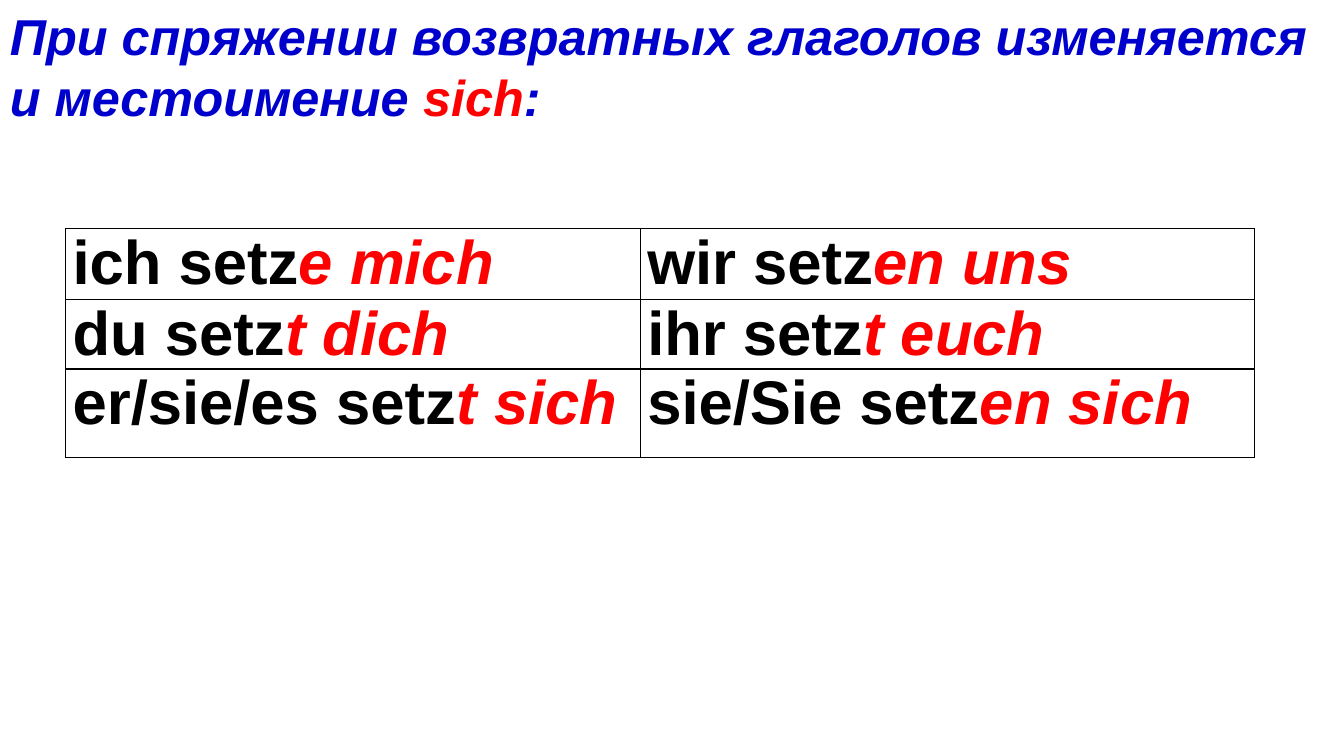
from dataclasses import dataclass

from lxml import etree
from pptx import Presentation
from pptx.dml.color import RGBColor
from pptx.enum.text import MSO_ANCHOR, PP_ALIGN
from pptx.oxml.ns import qn
from pptx.util import Pt

MIDDLE = MSO_ANCHOR.MIDDLE
TOP = MSO_ANCHOR.TOP
LEFT = PP_ALIGN.LEFT
JUSTIFY = PP_ALIGN.JUSTIFY
EMU_PER_PX = 9144


@dataclass(frozen=True)
class Theme:
    font: str = "Arial"
    title: str = "0000CC"
    stem: str = "000000"
    accent: str = "FF0000"
    border: str = "000000"
    title_size: int = 36
    table_size: int = 44
    border_width: int = 1


THEME = Theme()

CONJUGATION = [
    [("ich setz", "e mich"), ("wir setz", "en uns")],
    [("du setz", "t dich"), ("ihr setz", "t euch")],
    [("er/sie/es setz", "t sich"), ("sie/Sie setz", "en sich")],
]


def px(length):
    return length * EMU_PER_PX


def add_span(para, text, *, size, color, italic=False):
    span = para.add_run()
    span.text = text
    span.font.name = THEME.font
    span.font.size = Pt(size)
    span.font.bold = True
    span.font.italic = italic
    span.font.color.rgb = RGBColor.from_string(color)


def add_title(page, left, top, width, height):
    box = page.shapes.add_textbox(px(left), px(top), px(width), px(height))
    frame = box.text_frame
    frame.word_wrap = True
    frame.vertical_anchor = MIDDLE
    para = frame.paragraphs[0]
    para.alignment = LEFT
    spans = [
        ("При спряжении возвратных глаголов изменяется и местоимение ", THEME.title),
        ("sich", THEME.accent),
        (":", THEME.title),
    ]
    for text, color in spans:
        add_span(para, text, size=THEME.title_size, color=color, italic=True)


def set_borders(cell):
    properties = cell._tc.get_or_add_tcPr()
    for position, side in enumerate(("a:lnL", "a:lnR", "a:lnT", "a:lnB")):
        line = etree.Element(qn(side), w=str(Pt(THEME.border_width)))
        fill = etree.SubElement(line, qn("a:solidFill"))
        etree.SubElement(fill, qn("a:srgbClr"), val=THEME.border)
        properties.insert(position, line)


def fill_cell(cell, stem, ending):
    cell.fill.background()
    cell.margin_left = cell.margin_right = px(7)
    cell.margin_top = cell.margin_bottom = 0
    cell.vertical_anchor = TOP
    set_borders(cell)
    para = cell.text_frame.paragraphs[0]
    para.alignment = JUSTIFY
    add_span(para, stem, size=THEME.table_size, color=THEME.stem)
    add_span(para, ending, size=THEME.table_size, color=THEME.accent, italic=True)


def add_conjugation_table(page, left, top, column_widths, row_heights):
    table = page.shapes.add_table(
        len(row_heights), len(column_widths), px(left), px(top),
        px(sum(column_widths)), px(sum(row_heights)),
    ).table
    table.first_row = False
    table.horz_banding = False
    for column, width in zip(table.columns, column_widths):
        column.width = px(width)
    for row, height, forms in zip(table.rows, row_heights, CONJUGATION):
        row.height = px(height)
        for cell, (stem, ending) in zip(row.cells, forms):
            fill_cell(cell, stem, ending)


def main():
    deck = Presentation()
    deck.slide_width, deck.slide_height = px(1333), px(750)
    page = deck.slides.add_slide(deck.slide_layouts[6])
    add_conjugation_table(page, 65, 227, (570, 609), (70, 69, 88))
    add_title(page, 0, 0, 1333, 131)
    deck.save("out.pptx")


if __name__ == "__main__":
    main()
